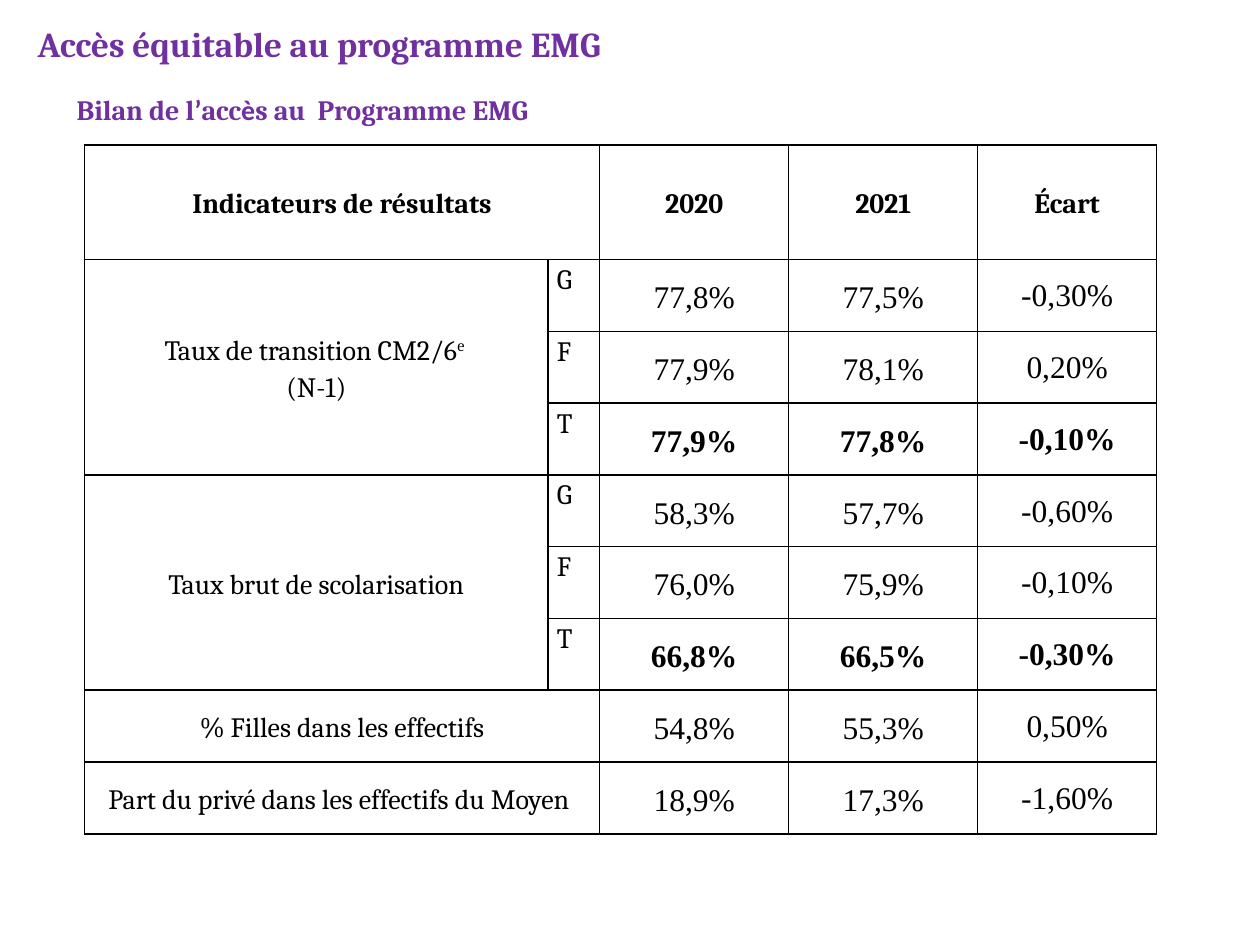
"""Build the slide on fair access to the EMG programme."""
from dataclasses import dataclass

from lxml import etree
from pptx import Presentation, util as u
from pptx.dml.color import RGBColor
from pptx.enum import text
from pptx.oxml import ns


@dataclass(frozen=True)
class Theme:
    heading_color: str = "7030A0"
    ink: str = "000000"
    paper: str = "FFFFFF"
    label_font: str = "Cambria"
    accent_font: str = "Calibri"
    number_font: str = "Times New Roman"
    title_size: int = 20
    label_size: int = 16
    number_size: int = 18
    border_width: int = 1
    line_spacing: float = 1.15


COLUMN_WIDTHS = [3.68, 0.41, 1.5, 1.5, 1.42]
HEADER_HEIGHT, ROW_HEIGHT = 0.91, 0.57
HEADERS = ["Indicateurs de résultats", "", "2020", "2021", "Écart"]
TRANSITION = [[("Taux de transition CM2/6", None), ("e ", "super")], [("(N-1)", None)]]
ROWS = [
    [TRANSITION, "G", "77,8%", "77,5%", "-0,30%"],
    ["", "F", "77,9%", "78,1%", "0,20%"],
    ["", "T", "77,9%", "77,8%", "-0,10%"],
    ["Taux brut de scolarisation", "G", "58,3%", "57,7%", "-0,60%"],
    ["", "F", "76,0%", "75,9%", "-0,10%"],
    ["", "T", "66,8%", "66,5%", "-0,30%"],
    ["% Filles dans les effectifs", "", "54,8%", "55,3%", "0,50%"],
    ["Part du privé dans les effectifs du Moyen ", "", "18,9%", "17,3%", "-1,60%"],
]
MERGES = [((0, 0), (0, 1)), ((1, 0), (3, 0)), ((4, 0), (6, 0)),
          ((7, 0), (7, 1)), ((8, 0), (8, 1))]


class SlideBuilder:
    """Hold the theme and the current slide."""

    def __init__(self, page, theme):
        self.page = page
        self.theme = theme

    def style(self, para, size, font, color, bold=False):
        para.font.size = u.Pt(size)
        para.font.name = font
        para.font.bold = bold
        para.font.color.rgb = RGBColor.from_string(color)

    def heading(self, left, top, width, height, size, spans, anchor):
        box = self.page.shapes.add_textbox(*map(u.Inches, (left, top, width, height)))
        frame = box.text_frame
        frame.word_wrap = True
        frame.auto_size = text.MSO_AUTO_SIZE.SHAPE_TO_FIT_TEXT
        frame.vertical_anchor = anchor
        para = frame.paragraphs[0]
        self.style(para, size, self.theme.label_font, self.theme.heading_color, True)
        for words, font in spans:
            span = para.add_run()
            span.text = words
            if font:
                span.font.name = font

    def borders(self, cell):
        properties = cell._tc.get_or_add_tcPr()
        for side in ("lnL", "lnR", "lnT", "lnB"):
            line = etree.SubElement(properties, ns.qn(f"a:{side}"),
                                    w=str(u.Pt(self.theme.border_width)))
            fill = etree.SubElement(line, ns.qn("a:solidFill"))
            etree.SubElement(fill, ns.qn("a:srgbClr"), val=self.theme.ink)

    def cell(self, cell, content, row, column):
        theme = self.theme
        self.borders(cell)
        cell.fill.solid()
        cell.fill.fore_color.rgb = RGBColor.from_string(theme.paper)
        is_gap = row > 0 and column == 4
        is_number = row > 0 and column >= 2
        is_gender = row > 0 and column == 1
        is_total = is_number and row in (3, 6)
        cell.margin_left = cell.margin_right = u.Inches(0.01 if is_gap else 0.07)
        cell.margin_top = u.Inches(0.01 if is_gap else 0)
        cell.margin_bottom = 0
        cell.vertical_anchor = text.MSO_ANCHOR.TOP if is_gender else text.MSO_ANCHOR.MIDDLE
        lines = [[(content, None)]] if isinstance(content, str) else content
        for index, spans in enumerate(lines):
            frame = cell.text_frame
            para = frame.add_paragraph() if index else frame.paragraphs[0]
            para.alignment = text.PP_ALIGN.JUSTIFY if is_gender else text.PP_ALIGN.CENTER
            if not is_gap:
                para.line_spacing = theme.line_spacing
            if column in (2, 3) and row in (4, 5, 6):
                para.space_after = u.Pt(10)
            self.style(para, theme.number_size if is_number else theme.label_size,
                       theme.number_font if is_number else theme.label_font,
                       theme.ink, row == 0 or is_total)
            for words, position in spans:
                if words:
                    span = para.add_run()
                    span.text = words
                    if position == "super":
                        span._r.get_or_add_rPr().set("baseline", "30000")

    def table(self, left, top, rows):
        heights = [HEADER_HEIGHT] + [ROW_HEIGHT] * (len(rows) - 1)
        size = (sum(COLUMN_WIDTHS), sum(heights))
        frame = self.page.shapes.add_table(
            len(rows), len(COLUMN_WIDTHS), *map(u.Inches, (left, top, *size)))
        table = frame.table
        table.first_row = table.horz_banding = False
        for column, width in zip(table.columns, COLUMN_WIDTHS):
            column.width = u.Inches(width)
        for row, height in zip(table.rows, heights):
            row.height = u.Inches(height)
        for r, values in enumerate(rows):
            for c, content in enumerate(values):
                self.cell(table.cell(r, c), content, r, c)
        for first, last in MERGES:
            table.cell(*first).merge(table.cell(*last))


def main():
    deck = Presentation()
    deck.slide_width, deck.slide_height = u.Inches(10), u.Inches(7.5)
    theme = Theme()
    builder = SlideBuilder(deck.slides.add_slide(deck.slide_layouts[6]), theme)
    builder.heading(0.2, 0.13, 4.8, 0.44, theme.title_size,
                    [("Accès équitable au programme EMG", None)], text.MSO_ANCHOR.TOP)
    builder.heading(0.51, 0.68, 4.09, 0.37, theme.label_size,
                    [("Bilan de l", None), ("’", theme.accent_font), ("acc", None),
                     ("è", theme.accent_font), ("s au  Programme EMG", None)],
                    text.MSO_ANCHOR.MIDDLE)
    builder.table(0.67, 1.15, [HEADERS] + ROWS)
    deck.save("out.pptx")


if __name__ == "__main__":
    main()
